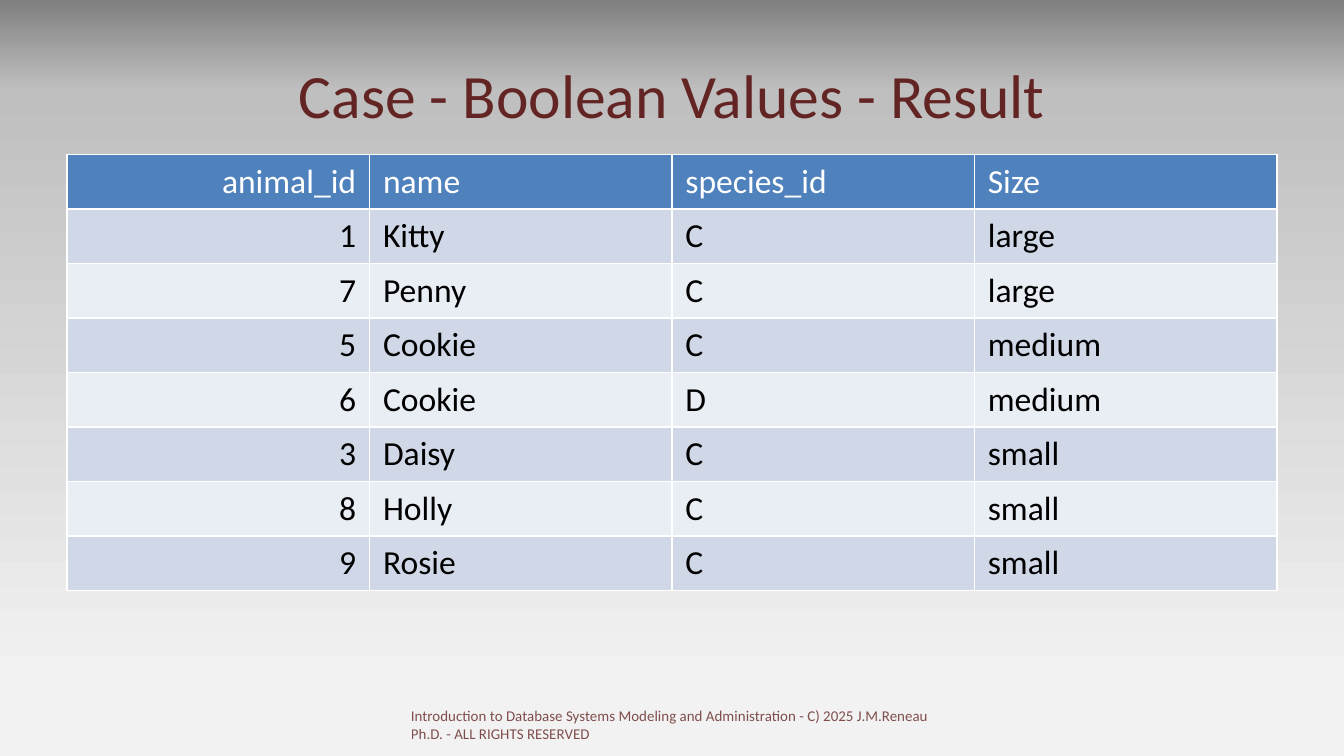
from copy import deepcopy

from pptx import Presentation
from pptx.dml.color import RGBColor as RGB
from pptx.enum.text import MSO_ANCHOR as Anchor, PP_ALIGN as Align
from pptx.oxml.ns import qn
from pptx.oxml.xmlchemy import OxmlElement as Node
from pptx.util import Inches, Pt

FONT = "Calibri"
MAROON = RGB(0x63, 0x25, 0x23)
BLUE = RGB(0x4F, 0x81, 0xBD)
BANDS = RGB(0xD0, 0xD8, 0xE8), RGB(0xE9, 0xED, 0xF4)
WHITE = RGB(0xFF, 0xFF, 0xFF)
BLACK = RGB(0, 0, 0)
STOPS = (
    (0, RGB(0x80, 0x80, 0x80)),
    (0.12, RGB(0xBF, 0xBF, 0xBF)),
    (0.9, RGB(0xF2, 0xF2, 0xF2)),
)
ROWS = (
    ("animal_id", "name", "species_id", "Size"),
    ("1", "Kitty", "C", "large"),
    ("7", "Penny", "C", "large"),
    ("5", "Cookie", "C", "medium"),
    ("6", "Cookie", "D", "medium"),
    ("3", "Daisy", "C", "small"),
    ("8", "Holly", "C", "small"),
    ("9", "Rosie", "C", "small"),
)


def write(frame, text, size, color, align=Align.LEFT):
    """Set the text of a frame and format its run."""
    frame.text = text
    para = frame.paragraphs[0]
    para.alignment = align
    font = para.runs[0].font
    font.name, font.size = FONT, Pt(size)
    font.color.rgb = color
    return para.runs[0]


def paint_back(slide):
    """Fill the background with a gradient from top to bottom."""
    fill = slide.background.fill
    fill.gradient()
    fill.gradient_angle = 270
    stops = slide.element.find(".//" + qn("a:gsLst"))
    stops.append(deepcopy(stops[-1]))
    for stop, (place, color) in zip(fill.gradient_stops, STOPS):
        stop.position = place
        stop.color.rgb = color


def add_title(slide, left, top, width, height):
    """Place the slide title in the given box."""
    title = slide.shapes.title
    title.left, title.top = Inches(left), Inches(top)
    title.width, title.height = Inches(width), Inches(height)
    title.text_frame.vertical_anchor = Anchor.MIDDLE
    write(title.text_frame, "Case - Boolean Values - Result", 33, MAROON, Align.CENTER)


def add_edges(cell, color, width):
    """Draw a line on all four sides of a cell."""
    props = cell._tc.get_or_add_tcPr()
    for spot, side in enumerate("LRTB"):
        line = Node(f"a:ln{side}")
        line.set("w", str(Pt(width)))
        fill = Node("a:solidFill")
        tint = Node("a:srgbClr")
        tint.set("val", str(color))
        fill.append(tint)
        line.append(fill)
        props.insert(spot, line)


def add_grid(slide, left, top, width, height):
    """Place the query result as a banded table in the given box."""
    box = map(Inches, (left, top, width, height))
    table = slide.shapes.add_table(len(ROWS), len(ROWS[0]), *box).table
    for row, texts in enumerate(ROWS):
        for col, text in enumerate(texts):
            cell = table.cell(row, col)
            cell.fill.solid()
            cell.fill.fore_color.rgb = BANDS[(row - 1) % 2] if row else BLUE
            align = Align.LEFT if col else Align.RIGHT
            run = write(cell.text_frame, text, 18, BLACK if row else WHITE, align)
            run.font.bold = False
            add_edges(cell, WHITE, 1)


def add_foot(slide, left, top, width, height):
    """Place the course notice in the given box."""
    box = slide.shapes.add_textbox(*map(Inches, (left, top, width, height)))
    box.text_frame.word_wrap = True
    text = (
        "Introduction to Database Systems Modeling and Administration"
        " - C) 2025 J.M.Reneau Ph.D. - ALL RIGHTS RESERVED"
    )
    run = write(box.text_frame, text, 8, MAROON)
    alpha = Node("a:alpha")
    alpha.set("val", "80000")
    run._r.find(".//" + qn("a:srgbClr")).append(alpha)


def main():
    """Build the slide and save it."""
    deck = Presentation()
    deck.slide_width = Inches(10)
    deck.slide_height = deck.slide_width * 9 // 16
    slide = deck.slides.add_slide(deck.slide_layouts[5])
    paint_back(slide)
    add_title(slide, 0.5, 0.23, 9, 0.94)
    add_grid(slide, 0.5, 1.15, 9, 3.24)
    add_foot(slide, 2.96, 5.21, 4.06, 0.3)
    deck.save("out.pptx")


if __name__ == "__main__":
    main()
